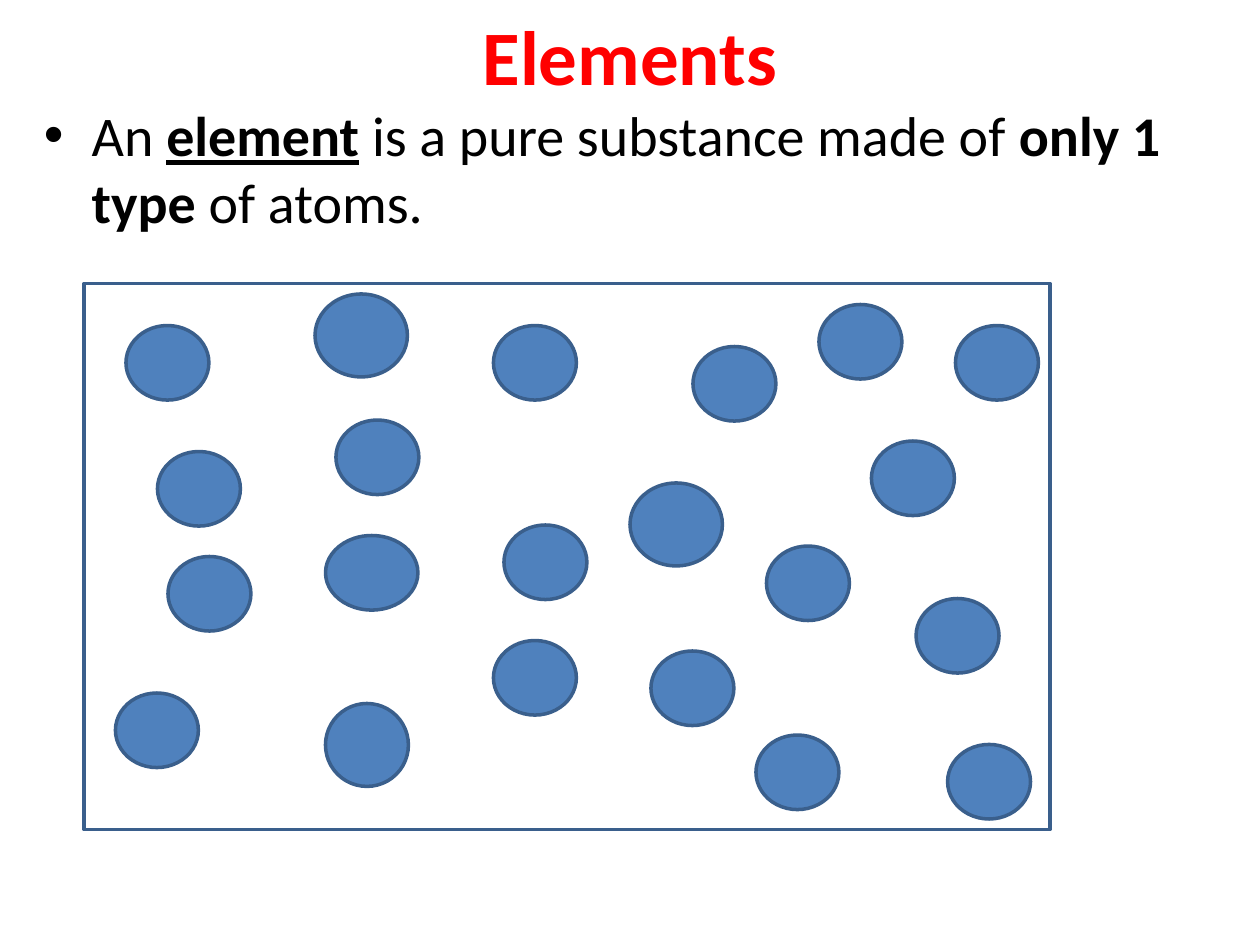
from dataclasses import dataclass

from lxml import etree
from pptx import Presentation
from pptx import util as u
from pptx.dml.color import RGBColor
from pptx.enum import shapes, text
from pptx.oxml.ns import qn

WHITE = RGBColor(0xFF, 0xFF, 0xFF)
BLACK = RGBColor(0x00, 0x00, 0x00)
RED = RGBColor(0xFF, 0x00, 0x00)
ATOM_BLUE = RGBColor(0x4F, 0x81, 0xBD)
OUTLINE_BLUE = RGBColor(0x3A, 0x5F, 0x8C)

COLUMNS, ROWS = 120, 90  # grid cells of a twelfth of an inch
FONT = "Calibri"


@dataclass(frozen=True)
class Box:
    """A rectangle in grid columns and rows."""
    column: float
    row: float
    width: float
    height: float


@dataclass(frozen=True)
class Atom:
    """The top left grid cell of an atom, and its size."""
    column: float
    row: float
    width: float = 7.9
    height: float = 7.1


TITLE = Box(6, 0, 108, 10.5)
DEFINITION = Box(3, 9, 114, 71.4)
CONTAINER = Box(8, 27, 92, 52)
LARGE = 8.8
ROUND = 7.9
ATOMS = [
    Atom(60, 46, LARGE, ROUND), Atom(30, 28, LARGE, ROUND),
    Atom(31, 67, ROUND, ROUND), Atom(31, 51, LARGE),
    Atom(32, 40), Atom(62, 62), Atom(78, 29), Atom(16, 53), Atom(48, 50),
    Atom(47, 31), Atom(66, 33), Atom(12, 31), Atom(11, 66), Atom(15, 43),
    Atom(47, 61), Atom(72, 70), Atom(73, 52), Atom(87.25, 57),
    Atom(90.25, 70.9), Atom(91, 31), Atom(83, 42),
]
DEFINITION_RUNS = [
    ("An ", {}),
    ("element", {"bold": True, "underline": True}),
    (" is a pure substance made of ", {}),
    ("only 1 type ", {"bold": True}),
    ("of atoms.", {}),
]


def place(presentation, box: Box | Atom) -> tuple[int, int, int, int]:
    """Turn grid units into slide lengths."""
    column = presentation.slide_width / COLUMNS
    row = presentation.slide_height / ROWS
    return (round(box.column * column), round(box.row * row),
            round(box.width * column), round(box.height * row))


def add_outlined(presentation, slide, kind, box: Box | Atom, fill: RGBColor) -> None:
    shape = slide.shapes.add_shape(kind, *place(presentation, box))
    shape.shadow.inherit = False
    shape.fill.solid()
    shape.fill.fore_color.rgb = fill
    shape.line.color.rgb = OUTLINE_BLUE
    shape.line.width = u.Pt(2)


def add_paragraph(presentation, slide, box: Box, anchor, runs, size: int,
                  color: RGBColor):
    """Add a text box with one paragraph of formatted runs."""
    frame = slide.shapes.add_textbox(*place(presentation, box)).text_frame
    frame.word_wrap = True
    frame.vertical_anchor = anchor
    paragraph = frame.paragraphs[0]
    for words, formats in runs:
        run = paragraph.add_run()
        run.text = words
        run.font.color.rgb = color
        for name, value in {"name": FONT, "size": u.Pt(size), **formats}.items():
            setattr(run.font, name, value)
    return paragraph


def add_bullet(paragraph) -> None:
    properties = paragraph._p.get_or_add_pPr()
    indent = u.Inches(0.38)
    properties.set("marL", str(indent))
    properties.set("indent", str(-indent))
    etree.SubElement(properties, qn("a:buFont")).set("typeface", "Arial")
    etree.SubElement(properties, qn("a:buChar")).set("char", "•")


def main() -> None:
    presentation = Presentation()
    presentation.slide_width = u.Inches(10)
    presentation.slide_height = u.Inches(7.5)
    slide = presentation.slides.add_slide(presentation.slide_layouts[6])

    # Container
    add_outlined(presentation, slide, shapes.MSO_SHAPE.RECTANGLE, CONTAINER, WHITE)

    # Title and definition
    title = add_paragraph(presentation, slide, TITLE, text.MSO_ANCHOR.MIDDLE,
                          [("Elements", {"bold": True})], 44, RED)
    title.alignment = text.PP_ALIGN.CENTER
    definition = add_paragraph(presentation, slide, DEFINITION, text.MSO_ANCHOR.TOP,
                               DEFINITION_RUNS, 32, BLACK)
    definition.space_before = u.Pt(6.4)
    add_bullet(definition)

    # Atoms
    for atom in ATOMS:
        add_outlined(presentation, slide, shapes.MSO_SHAPE.OVAL, atom, ATOM_BLUE)

    presentation.save("out.pptx")


if __name__ == "__main__":
    main()
